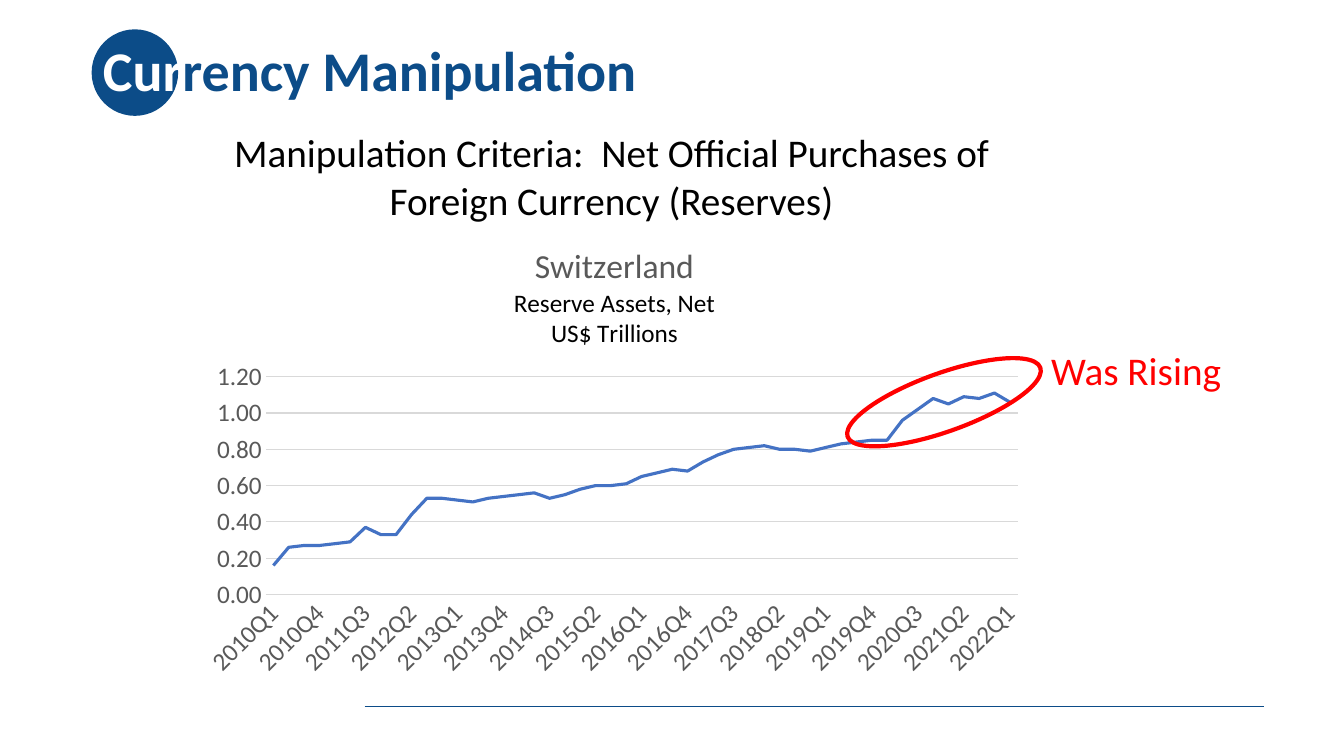
from dataclasses import dataclass

from lxml.etree import SubElement
from pptx import Presentation
from pptx.chart.data import CategoryChartData
from pptx.dml.color import RGBColor
from pptx.enum.chart import XL_CHART_TYPE, XL_TICK_MARK
from pptx.enum.shapes import MSO_CONNECTOR, MSO_SHAPE
from pptx.enum.text import MSO_ANCHOR, MSO_AUTO_SIZE, PP_ALIGN
from pptx.oxml import parse_xml
from pptx.oxml.ns import nsdecls, qn
from pptx.util import Cm, Pt


@dataclass(frozen=True)
class Theme:
    font: str = "Calibri"
    navy: str = "0C4C88"
    white: str = "FFFFFF"
    black: str = "000000"
    red: str = "FF0000"
    gray: str = "595959"
    grid: str = "D9D9D9"
    blue: str = "4472C4"
    title: int = 40
    text: int = 28
    head: int = 24
    label: int = 18


@dataclass(frozen=True)
class Box:
    """Left, top, width and height in centimetres."""
    x: float
    y: float
    w: float
    h: float

    def emu(self) -> tuple:
        return Cm(self.x), Cm(self.y), Cm(self.w), Cm(self.h)


@dataclass(frozen=True)
class Label:
    text: str
    box: Box
    color: str
    align: PP_ALIGN


@dataclass(frozen=True)
class Oval:
    box: Box
    fill: str = ""
    line: str = ""
    turn: float = 0


THEME = Theme()
LABELS = (
    Label("Manipulation Criteria:  Net Official Purchases of Foreign Currency (Reserves)",
          Box(5.54, 3.12, 19.74, 2.64), THEME.black, PP_ALIGN.CENTER),
    Label("Was Rising", Box(26.24, 8.59, 5.18, 1.45), THEME.red, PP_ALIGN.LEFT),
)
DISC = Oval(Box(2.31, 0.74, 2.18, 2.18), fill=THEME.navy)
RING = Oval(Box(21.21, 9.4, 5.16, 1.47), line=THEME.red, turn=340.3)
ASSETS = (
    0.16, 0.26, 0.27, 0.27, 0.28, 0.29, 0.37, 0.33, 0.33, 0.44, 0.53, 0.53,
    0.52, 0.51, 0.53, 0.54, 0.55, 0.56, 0.53, 0.55, 0.58, 0.6, 0.6, 0.61,
    0.65, 0.67, 0.69, 0.68, 0.73, 0.77, 0.8, 0.81, 0.82, 0.8, 0.8, 0.79,
    0.81, 0.83, 0.84, 0.85, 0.85, 0.96, 1.02, 1.08, 1.05, 1.09, 1.08, 1.11,
    1.06,
)


def style(font, size: int, color: str, bold: bool = False) -> None:
    font.name, font.size, font.bold = THEME.font, Pt(size), bold
    font.color.rgb = RGBColor.from_string(color)


def stroke(line, color: str, width: float) -> None:
    line.color.rgb = RGBColor.from_string(color)
    line.width = Pt(width)


def add_title(slide) -> None:
    title = slide.shapes.title
    title.left, title.top, title.width, title.height = Box(2.34, 0, 29.21, 3.68).emu()
    frame = title.text_frame
    frame.auto_size = MSO_AUTO_SIZE.NONE
    frame.vertical_anchor = MSO_ANCHOR.MIDDLE
    line = frame.paragraphs[0]
    line.text = "Cur"
    line.add_run().text = "rency Manipulation"
    line.alignment, line.line_spacing = PP_ALIGN.LEFT, 0.9
    for run, color in zip(line.runs, (THEME.white, THEME.navy)):
        style(run.font, THEME.title, color, True)


def add_label(slide, label: Label) -> None:
    frame = slide.shapes.add_textbox(*label.box.emu()).text_frame
    frame.word_wrap = True
    frame.auto_size = MSO_AUTO_SIZE.SHAPE_TO_FIT_TEXT
    frame.text = label.text
    line = frame.paragraphs[0]
    line.alignment = label.align
    style(line.runs[0].font, THEME.text, label.color)


def add_oval(slide, oval: Oval):
    shape = slide.shapes.add_shape(MSO_SHAPE.OVAL, *oval.box.emu())
    shape.shadow.inherit = False
    shape.rotation = oval.turn
    if oval.fill:
        shape.fill.solid()
        shape.fill.fore_color.rgb = RGBColor.from_string(oval.fill)
    else:
        shape.fill.background()
    if oval.line:
        stroke(shape.line, oval.line, 3)
    else:
        shape.line.fill.background()
    return shape


def add_rule(slide) -> None:
    rule = slide.shapes.add_connector(
        MSO_CONNECTOR.STRAIGHT, Cm(9.19), Cm(17.81), Cm(31.85), Cm(17.81))
    stroke(rule.line, THEME.navy, 0.5)
    SubElement(rule.element.spPr, qn("a:effectLst"))


def layout(target: str, **parts: float):
    """Build a manual chart layout from fractions of the chart's size."""
    rows = f'<c:layoutTarget val="{target}"/>' if target else ""
    rows += '<c:xMode val="edge"/><c:yMode val="edge"/>'
    rows += "".join(f'<c:{key} val="{val}"/>' for key, val in parts.items())
    return parse_xml(f'<c:layout {nsdecls("c")}><c:manualLayout>{rows}'
                     "</c:manualLayout></c:layout>")


def place(chart) -> None:
    """Fix the title and plot area, and slant every third quarter's label."""
    root = chart.element
    for old in root.xpath(".//c:title/c:layout | .//c:plotArea/c:layout"):
        old.getparent().remove(old)
    root.xpath(".//c:title/c:tx")[0].addnext(layout("", x=0.38, y=0.04))
    root.xpath(".//c:plotArea")[0].insert(
        0, layout("inner", x=0.09, y=0.33, w=0.89, h=0.47))
    root.xpath(".//c:catAx/c:txPr/a:bodyPr")[0].set("rot", "-2700000")
    skip = parse_xml(f'<c:tickLblSkip {nsdecls("c")} val="3"/>')
    root.xpath(".//c:catAx/c:noMultiLvlLbl")[0].addprevious(skip)


def add_graph(slide) -> None:
    data = CategoryChartData(number_format="#,##0.00")
    data.categories = [f"{2010 + i // 4}Q{i % 4 + 1}" for i in range(len(ASSETS))]
    data.add_series("Series 1", ASSETS)
    chart = slide.shapes.add_chart(
        XL_CHART_TYPE.LINE, *Box(4.78, 5.64, 21.29, 11.68).emu(), data).chart
    style(chart.font, 10, THEME.black)
    chart.has_legend = False
    frame = chart.chart_title.text_frame
    frame.text = "Switzerland\nReserve Assets, Net\nUS$ Trillions"
    looks = ((THEME.head, THEME.gray),) + ((THEME.label, THEME.black),) * 2
    for line, look in zip(frame.paragraphs, looks):
        style(line.runs[0].font, *look)

    time, value = chart.category_axis, chart.value_axis
    for axis in (time, value):
        axis.major_tick_mark = axis.minor_tick_mark = XL_TICK_MARK.NONE
        style(axis.tick_labels.font, THEME.label, THEME.gray)
    stroke(time.format.line, THEME.grid, 0.75)
    value.format.line.fill.background()
    stroke(value.major_gridlines.format.line, THEME.grid, 0.75)
    value.minimum_scale, value.maximum_scale, value.major_unit = 0, 1.2, 0.2
    value.tick_labels.number_format = "#,##0.00"
    value.tick_labels.number_format_is_linked = False

    plot = chart.plots[0]
    plot.vary_by_categories = False
    plot.series[0].smooth = False
    stroke(plot.series[0].format.line, THEME.blue, 2.25)
    place(chart)


def main() -> None:
    deck = Presentation()
    deck.slide_width, deck.slide_height = Cm(33.87), Cm(19.05)
    slide = deck.slides.add_slide(deck.slide_layouts[5])
    add_rule(slide)
    disc = add_oval(slide, DISC)
    slide.shapes.title.element.addprevious(disc.element)
    add_title(slide)
    add_graph(slide)
    add_oval(slide, RING)
    for label in LABELS:
        add_label(slide, label)
    deck.save("out.pptx")


if __name__ == "__main__":
    main()
